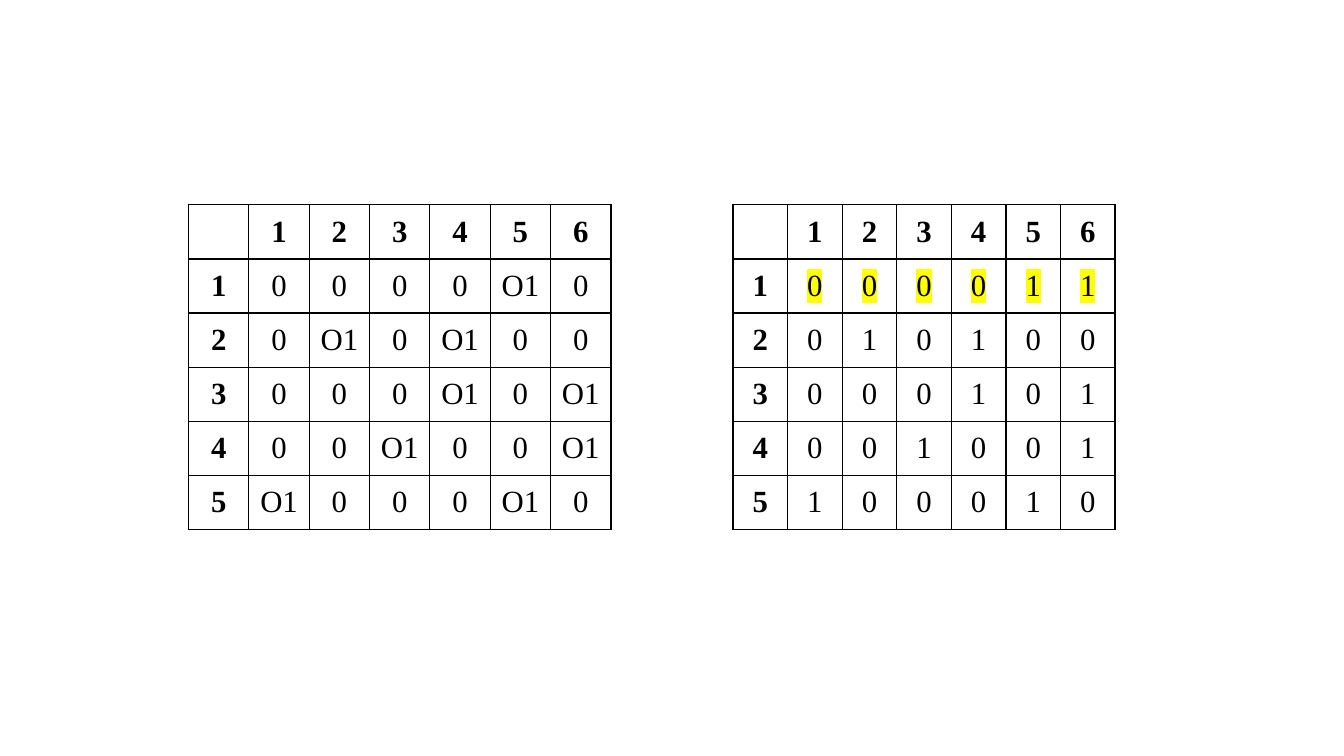
"""Build a slide with two incidence matrices side by side."""
import pptx
import pptx.dml.color
import pptx.enum.text
import pptx.oxml
import pptx.oxml.ns
import pptx.util
from lxml import etree

COLOURS = {"ink": "000000", "paper": "FFFFFF", "marker": "FFFF00"}

LABELLED_ROWS = ["0 0 0 0 O1 0", "0 O1 0 O1 0 0", "0 0 0 O1 0 O1",
                 "0 0 O1 0 0 O1", "O1 0 0 0 O1 0"]
BINARY_ROWS = ["0 0 0 0 1 1", "0 1 0 1 0 0", "0 0 0 1 0 1",
               "0 0 1 0 0 1", "1 0 0 0 1 0"]


class MatrixSlide:
    font = "Times New Roman"
    size = pptx.util.Pt(22)
    border = pptx.util.Pt(1)
    side_margin = pptx.util.Inches(0.07)

    def __init__(self, deck):
        self.width, self.height = deck.slide_width, deck.slide_height
        self.slide = deck.slides.add_slide(deck.slide_layouts[6])

    def across(self, percent):
        return round(self.width * percent / 100)

    def down(self, percent):
        return round(self.height * percent / 100)

    def colour(self, name):
        return pptx.dml.color.RGBColor.from_string(COLOURS[name])

    def solid(self, parent, tag, name):
        holder = etree.SubElement(parent, pptx.oxml.ns.qn(tag))
        etree.SubElement(holder, pptx.oxml.ns.qn("a:srgbClr"), val=COLOURS[name])
        return holder

    def frame(self, cell):
        properties = cell._tc.get_or_add_tcPr()
        for position, side in enumerate(("a:lnL", "a:lnR", "a:lnT", "a:lnB")):
            line = etree.Element(pptx.oxml.ns.qn(side), w=str(self.border))
            self.solid(line, "a:solidFill", "ink")
            properties.insert(position, line)

    def highlight(self, paragraph):
        for run in paragraph.runs:
            self.solid(run._r.get_or_add_rPr(), "a:highlight", "marker")

    def entry(self, cell, value, bold, marked):
        cell.fill.solid()
        cell.fill.fore_color.rgb = self.colour("paper")
        cell.margin_left = cell.margin_right = self.side_margin
        cell.margin_top = cell.margin_bottom = 0
        cell.vertical_anchor = pptx.enum.text.MSO_ANCHOR.MIDDLE
        self.frame(cell)
        paragraph = cell.text_frame.paragraphs[0]
        paragraph.alignment = pptx.enum.text.PP_ALIGN.CENTER
        paragraph.font.name = self.font
        paragraph.font.size = self.size
        paragraph.font.bold = bold
        paragraph.font.color.rgb = self.colour("ink")
        if value:
            paragraph.add_run().text = value
        if marked:
            self.highlight(paragraph)

    def matrix(self, rows, left, top, width, height, marked_row=None):
        values = [row.split() for row in rows]
        header = [""] + [str(n + 1) for n in range(len(values[0]))]
        grid = [header] + [[str(n), *row] for n, row in enumerate(values, 1)]
        table = self.slide.shapes.add_table(
            len(grid), len(header), self.across(left), self.down(top),
            self.across(width), self.down(height)).table
        table.first_row = table.horz_banding = False
        for r, row in enumerate(grid):
            for c, value in enumerate(row):
                heading = r == 0 or c == 0
                self.entry(table.cell(r, c), value, heading,
                           r == marked_row and not heading)


def main():
    deck = pptx.Presentation()
    deck.slide_width = pptx.util.Inches(13.33)
    deck.slide_height = pptx.util.Inches(7.5)
    page = MatrixSlide(deck)
    top, height = 27.1, 42.93
    page.matrix(BINARY_ROWS, 54.54, top, 28.43, height, marked_row=1)
    page.matrix(LABELLED_ROWS, 14.03, top, 31.43, height)
    deck.save("out.pptx")


if __name__ == "__main__":
    main()
